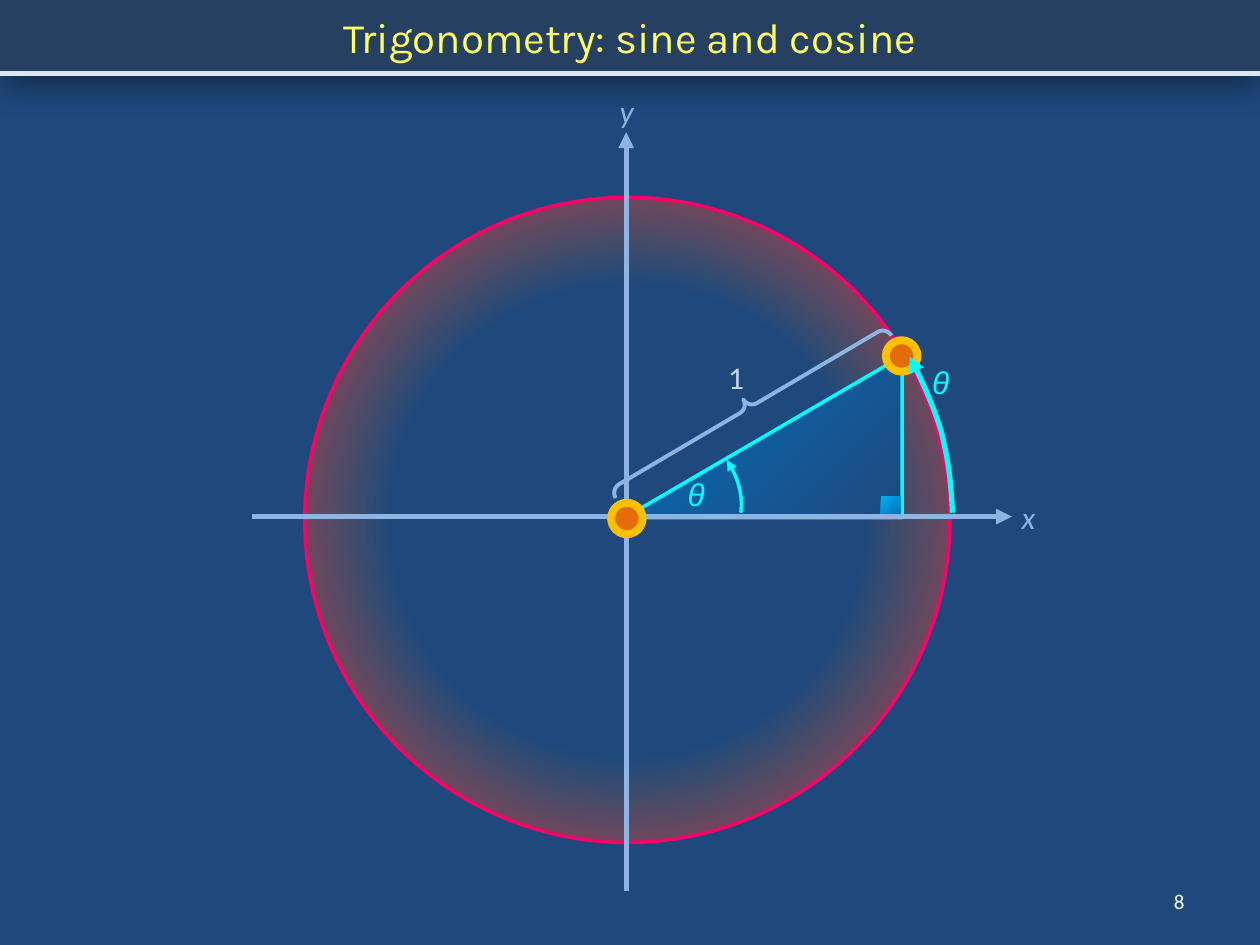
from dataclasses import dataclass
from typing import Optional

from pptx import Presentation
from pptx.dml.color import RGBColor
from pptx.enum.shapes import MSO_CONNECTOR, MSO_SHAPE
from pptx.enum.text import MSO_ANCHOR, MSO_AUTO_SIZE, PP_ALIGN
from pptx.oxml import parse_xml
from pptx.oxml.ns import nsdecls, qn
from pptx.util import Pt

NAVY = RGBColor(0x1F, 0x49, 0x7D)
BAND = RGBColor(0x25, 0x40, 0x61)
YELLOW = RGBColor(0xFF, 0xFF, 0x66)
PALE = RGBColor(0xDC, 0xE6, 0xF2)
MIST = RGBColor(0xC6, 0xD9, 0xF1)
SKY = RGBColor(0x8E, 0xB4, 0xE3)
CYAN = RGBColor(0x00, 0xFF, 0xFF)
PINK = RGBColor(0xFF, 0x00, 0x66)
ORANGE = RGBColor(0xE4, 0x6C, 0x0A)
GOLD = RGBColor(0xFF, 0xC0, 0x00)
BLUE = RGBColor(0x00, 0x70, 0xC0)
AQUA = RGBColor(0x00, 0xB0, 0xF0)
WHITE = RGBColor(0xFF, 0xFF, 0xFF)

SLANT = '<a:lin ang="2700000" scaled="1"/>'
ROUND = ('<a:path path="circle"><a:fillToRect l="50000" t="50000" '
         'r="50000" b="50000"/></a:path>')
STEPS = 10


@dataclass
class Label:
    text: str
    box: tuple
    color: RGBColor
    font: str = "Calibri"
    size: int = 18
    italic: bool = True
    wrap: bool = False


@dataclass
class Shape:
    kind: MSO_SHAPE
    box: tuple
    fill: Optional[RGBColor] = None
    line: Optional[RGBColor] = None
    width: float = 0
    turn: float = 0
    adjust: tuple = ()


@dataclass
class Axis:
    start: tuple
    end: tuple


@dataclass
class Arc:
    curves: tuple
    width: float


LABELS = [
    Label("1", (409, 200.9, 23.8, 28.8), MIST, italic=False),
    Label("θ", (385.9, 267.8, 24.5, 28.8), CYAN, "Arial"),
    Label("x", (576.7, 280.8, 22.3, 28.8), SKY),
    Label("y", (347, 49, 22.3, 28.8), SKY),
    Label("θ", (525.6, 203.8, 26.6, 28.8), CYAN, "Arial", wrap=True),
]
AXES = [Axis((357.8, 509), (357.8, 75.6)), Axis((144, 295.2), (578.2, 295.2))]
DOTS = [(358.2, 296.3), (515.2, 203.4)]
ARCS = [
    Arc((((423.4, 293), (424.1, 286.6), (423.4, 281.5), (421.9, 276.5)),
         ((421.9, 276.5), (420.5, 271.4), (417.6, 266.4), (415.4, 262.8))), 2),
    Arc((((544.3, 293), (543.6, 273.6), (541.4, 260.6), (537.8, 246.2)),
         ((537.8, 246.2), (533.5, 231.8), (526.3, 216), (519.8, 203.8))), 3),
]


def assign(thing, values: dict) -> None:
    for name, value in values.items():
        setattr(thing, name, value)


def place(thing, box: tuple) -> None:
    assign(thing, dict(zip(("left", "top", "width", "height"), map(Pt, box))))


def style(part, text: str, color: RGBColor, align=None, **font) -> None:
    para = part.paragraphs[0]
    para.alignment = align
    run = para.add_run()
    run.text = text
    assign(run.font, font)
    run.font.color.rgb = color


def stroke(thing, color: RGBColor, width: float, arrow: bool = False) -> None:
    thing.line.color.rgb = color
    thing.line.width = Pt(width)
    if arrow:
        thing.line._get_or_add_ln().append(
            parse_xml(f'<a:tailEnd {nsdecls("a")} type="triangle"/>'))


def draw(slide, item: Shape):
    shape = slide.shapes.add_shape(item.kind, *map(Pt, item.box))
    shape.shadow.inherit = False
    shape.rotation = item.turn
    for i, value in enumerate(item.adjust):
        shape.adjustments[i] = value
    if item.fill:
        shape.fill.solid()
        shape.fill.fore_color.rgb = item.fill
    else:
        shape.fill.background()
    if item.line:
        stroke(shape, item.line, item.width)
    else:
        shape.line.fill.background()
    return shape


def blend(shape, stops: list, course: str) -> None:
    marks = "".join(
        f'<a:gs pos="{spot * 1000}"><a:srgbClr val="{color}">'
        f'<a:alpha val="{alpha * 1000}"/></a:srgbClr></a:gs>'
        for spot, color, alpha in stops)
    props = shape._element.spPr
    props.replace(props.find(qn("a:noFill")), parse_xml(
        f'<a:gradFill {nsdecls("a")} rotWithShape="1">'
        f'<a:gsLst>{marks}</a:gsLst>{course}</a:gradFill>'))


def write(slide, item: Label) -> None:
    box = slide.shapes.add_textbox(*map(Pt, item.box))
    assign(box.text_frame, {"word_wrap": item.wrap,
                            "auto_size": MSO_AUTO_SIZE.SHAPE_TO_FIT_TEXT})
    style(box.text_frame, item.text, item.color, name=item.font,
          size=Pt(item.size), italic=item.italic)


def extend(slide, axis: Axis) -> None:
    line = slide.shapes.add_connector(
        MSO_CONNECTOR.STRAIGHT, *map(Pt, axis.start + axis.end))
    stroke(line, SKY, 3, True)
    line._element.spPr.append(parse_xml(f'<a:effectLst {nsdecls("a")}/>'))


def point(curve: tuple, t: float) -> tuple:
    parts = ((1 - t) ** 3, 3 * t * (1 - t) ** 2, 3 * t * t * (1 - t), t ** 3)
    return tuple(Pt(sum(w * p[i] for w, p in zip(parts, curve)))
                 for i in (0, 1))


def sweep(slide, arc: Arc) -> None:
    spots = [point(curve, n / STEPS)
             for curve in arc.curves for n in range(1, STEPS + 1)]
    pen = slide.shapes.build_freeform(*point(arc.curves[0], 0))
    pen.add_line_segments(spots, close=False)
    shape = pen.convert_to_shape()
    shape.shadow.inherit = False
    shape.fill.background()
    stroke(shape, CYAN, arc.width, True)


def head(slide) -> None:
    title = slide.shapes.title
    place(title, (0, 0, 720, 41.8))
    title.fill.solid()
    title.fill.fore_color.rgb = BAND
    title.text_frame.vertical_anchor = MSO_ANCHOR.MIDDLE
    style(title.text_frame, "Trigonometry: sine and cosine", YELLOW,
          PP_ALIGN.CENTER, name="Karla", size=Pt(24))
    title._element.spPr.append(parse_xml(
        f'<a:effectLst {nsdecls("a")}><a:outerShdw blurRad="{Pt(20)}" '
        f'dist="{Pt(5)}" dir="5400000" algn="t" rotWithShape="0">'
        '<a:srgbClr val="000000"><a:alpha val="50000"/></a:srgbClr>'
        '</a:outerShdw></a:effectLst>'))


def main() -> None:
    deck = Presentation()
    assign(deck, {"slide_width": Pt(720), "slide_height": Pt(540)})
    slide = deck.slides.add_slide(deck.slide_layouts[5])
    slide.background.fill.solid()
    slide.background.fill.fore_color.rgb = NAVY
    head(slide)
    ring = draw(slide, Shape(MSO_SHAPE.OVAL, (174.2, 112.8, 368.6, 368.6),
                             line=PINK, width=2))
    blend(ring, [(52, ORANGE, 0), (100, PINK, 100)], ROUND)
    wedge = draw(slide, Shape(MSO_SHAPE.ISOSCELES_TRIANGLE,
                              (357.2, 203.5, 158.3, 92.2),
                              line=CYAN, width=2, adjust=(1,)))
    blend(wedge, [(0, BLUE, 100), (100, NAVY, 100)], SLANT)
    square = draw(slide, Shape(MSO_SHAPE.RECTANGLE, (503.4, 283.6, 11, 11)))
    blend(square, [(0, AQUA, 100), (100, BLUE, 100)], SLANT)
    for axis in AXES:
        extend(slide, axis)
    draw(slide, Shape(MSO_SHAPE.RECTANGLE, (-12, 41.8, 744, 516),
                      line=PALE, width=3))
    page = slide.shapes.add_textbox(*map(Pt, (516, 500.4, 168, 28.8)))
    assign(page.text_frame, {"word_wrap": True,
                             "vertical_anchor": MSO_ANCHOR.MIDDLE})
    style(page.text_frame, "8", WHITE, PP_ALIGN.RIGHT,
          name="Calibri", size=Pt(12))
    draw(slide, Shape(MSO_SHAPE.LEFT_BRACE, (421.9, 141.8, 11.5, 182.9),
                      line=SKY, width=2.25, turn=59.5, adjust=(0.483, 0.5)))
    for x, y in DOTS:
        draw(slide, Shape(MSO_SHAPE.OVAL, (x - 9, y - 9, 18, 18),
                          ORANGE, GOLD, 4.5))
    for label in LABELS:
        write(slide, label)
    for arc in ARCS:
        sweep(slide, arc)
    deck.save("out.pptx")


if __name__ == "__main__":
    main()
